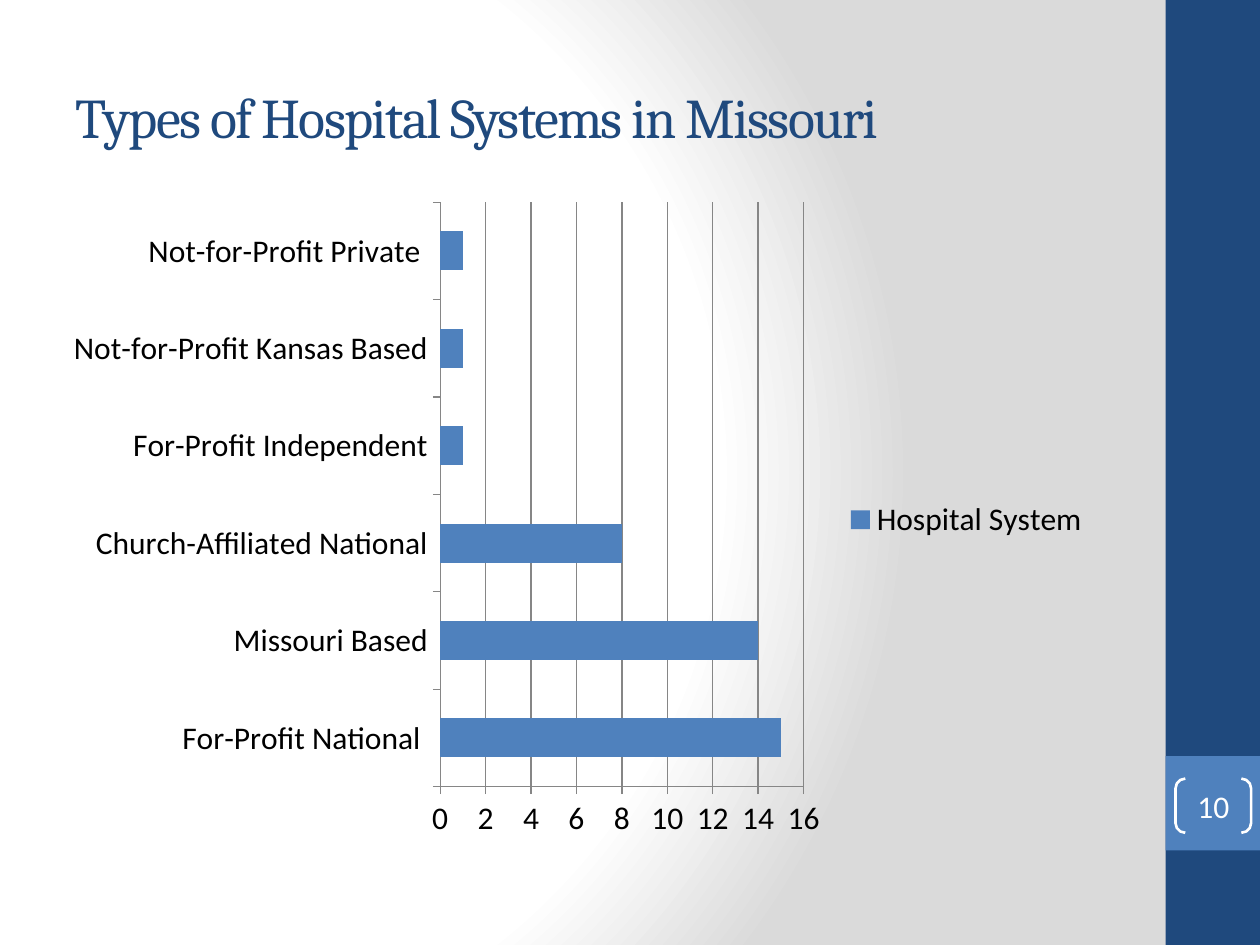
from pptx import Presentation
from pptx import util as u
from pptx.chart.data import CategoryChartData
from pptx.dml.color import RGBColor
from pptx.enum import chart as charts, shapes, text
from pptx.oxml import parse_xml
from pptx.oxml.ns import nsdecls, qn

EMU_PER_PX = 9144  # 100 px to the inch
NAVY = RGBColor(0x1F, 0x49, 0x7D)
BLUE = RGBColor(0x4F, 0x81, 0xBD)
WHITE = RGBColor(0xFF, 0xFF, 0xFF)
BLACK = RGBColor(0, 0, 0)
SILVER = RGBColor(0xDA, 0xDA, 0xDA)
GRID_GRAY = RGBColor(0x86, 0x86, 0x86)
HEADING_FONT = "Cambria"
BODY_FONT = "Calibri"

HOSPITAL_SYSTEMS = {
    "For-Profit National ": 15,
    "Missouri Based": 14,
    "Church-Affiliated National": 8,
    "For-Profit Independent": 1,
    "Not-for-Profit Kansas Based": 1,
    "Not-for-Profit Private ": 1,
}


def px(*lengths):
    return [u.Emu(length * EMU_PER_PX) for length in lengths]


class SlideBuilder:
    def __init__(self, slide):
        self.slide = slide

    def radial_background(self, stops, focus):
        background = self.slide.background
        background.fill.gradient()
        gradient = self.slide.element.find(".//" + qn("a:gradFill"))
        stop_xml = "".join(
            f'<a:gs pos="{percent * 1000}"><a:srgbClr val="{color}"/></a:gs>'
            for percent, color in stops)
        sides = " ".join(f'{side}="{percent * 1000}"'
                         for side, percent in zip("ltrb", focus))
        gradient.getparent().replace(gradient, parse_xml(
            f'<a:gradFill {nsdecls("a")} rotWithShape="1"><a:gsLst>{stop_xml}</a:gsLst>'
            f'<a:path path="circle"><a:fillToRect {sides}/></a:path></a:gradFill>'))

    def add_words(self, frame, words, size, font, color, align, spacing=0):
        frame.word_wrap = True
        frame.vertical_anchor = text.MSO_ANCHOR.MIDDLE
        paragraph = frame.paragraphs[0]
        paragraph.alignment = align
        run = paragraph.add_run()
        run.text = words
        run.font.size = u.Pt(size)
        run.font.name = font
        run.font.color.rgb = color
        if spacing:
            run.font._element.set("spc", str(spacing * 100))

    def panel(self, box, color):
        shape = self.slide.shapes.add_shape(shapes.MSO_SHAPE.RECTANGLE, *px(*box))
        shape.shadow.inherit = False
        shape.fill.solid()
        shape.fill.fore_color.rgb = color
        shape.line.fill.background()

    def title(self, box, words):
        shape = self.slide.shapes.add_textbox(*px(*box))
        self.add_words(shape.text_frame, words, 32, HEADING_FONT, NAVY,
                       text.PP_ALIGN.LEFT, spacing=-1)

    def page_number(self, box, number):
        shape = self.slide.shapes.add_shape(shapes.MSO_SHAPE.DOUBLE_BRACKET, *px(*box))
        shape.shadow.inherit = False
        shape.adjustments[0] = 0.18
        shape.fill.background()
        shape.line.color.rgb = WHITE
        shape.line.width = u.Pt(1.5)
        frame = shape.text_frame
        frame.margin_left = frame.margin_right = 0
        frame.margin_top = frame.margin_bottom = 0
        self.add_words(frame, number, 18, BODY_FONT, WHITE, text.PP_ALIGN.CENTER)

    def bar_chart(self, box, series_name, values):
        data = CategoryChartData()
        data.categories = list(values)
        data.add_series(series_name, list(values.values()))
        chart = self.slide.shapes.add_chart(
            charts.XL_CHART_TYPE.BAR_CLUSTERED, *px(*box), data).chart
        chart.font.name = BODY_FONT
        chart.font.size = u.Pt(18)
        chart.font.color.rgb = BLACK
        chart.has_title = False
        chart.has_legend = True
        chart.legend.position = charts.XL_LEGEND_POSITION.RIGHT
        chart.legend.include_in_layout = False

        plot = chart.plots[0]
        plot.gap_width = 150
        plot.vary_by_categories = False
        series_fill = plot.series[0].format.fill
        series_fill.solid()
        series_fill.fore_color.rgb = BLUE

        chart.value_axis.has_major_gridlines = True
        for axis in (chart.category_axis, chart.value_axis):
            axis.major_tick_mark = charts.XL_TICK_MARK.OUTSIDE
            axis.minor_tick_mark = charts.XL_TICK_MARK.NONE
        for part in (chart.category_axis, chart.value_axis,
                     chart.value_axis.major_gridlines):
            part.format.line.color.rgb = GRID_GRAY
            part.format.line.width = u.Pt(0.75)


def main():
    presentation = Presentation()
    presentation.slide_width, presentation.slide_height = px(1000, 750)
    builder = SlideBuilder(presentation.slides.add_slide(presentation.slide_layouts[6]))

    # Background and side band
    builder.radial_background([(0, WHITE), (75, WHITE), (100, SILVER)],
                              (20, 50, 100, 50))
    builder.panel((925, 0, 75, 750), NAVY)
    builder.panel((925, 600, 75, 75), BLUE)

    # Title and chart
    builder.title((50, 30, 833, 125), "Types of Hospital Systems in Missouri")
    builder.bar_chart((42, 150, 833, 525), "Hospital System", HOSPITAL_SYSTEMS)

    # Page number
    builder.page_number((933, 618, 60, 43), "10")

    presentation.save("out.pptx")


if __name__ == "__main__":
    main()
